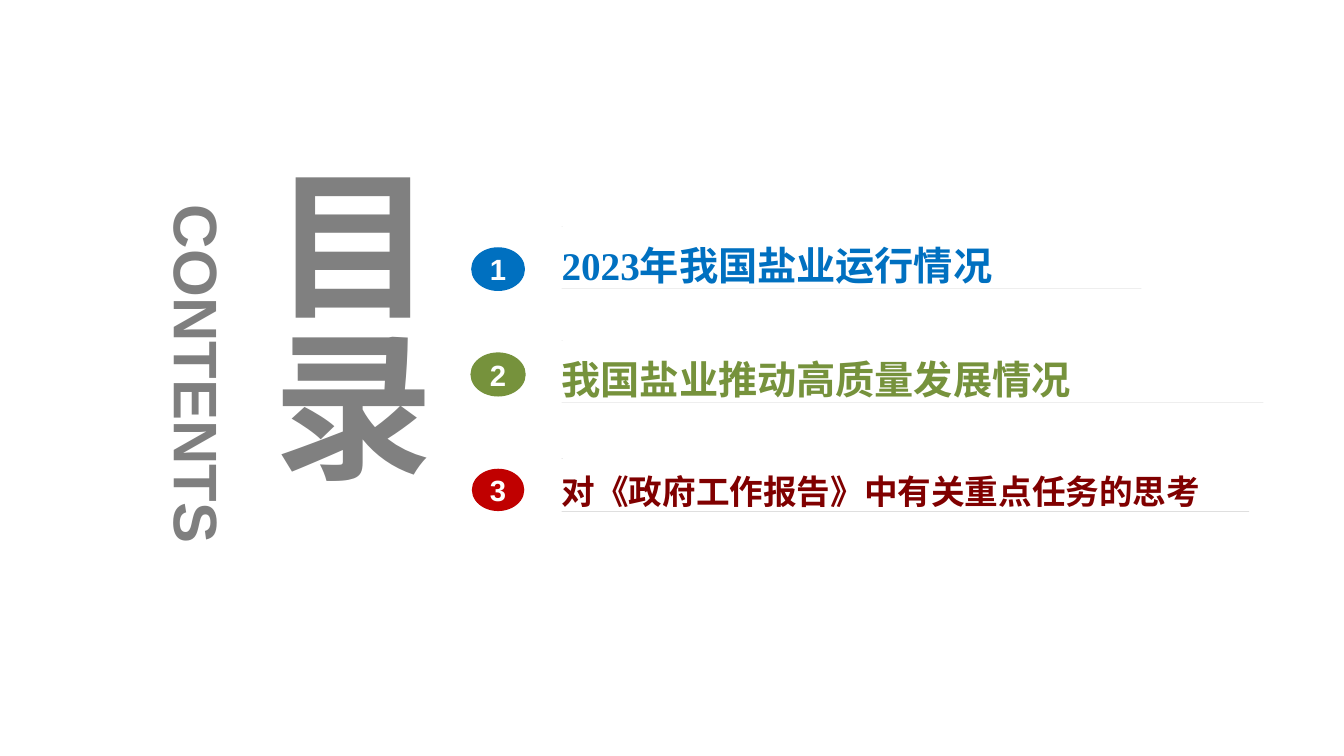
from dataclasses import dataclass

import pptx
import pptx.dml.color
import pptx.enum.shapes
import pptx.enum.text
import pptx.oxml
import pptx.oxml.ns
import pptx.util
from pptx.util import Inches

RGB = pptx.dml.color.RGBColor.from_string
ALIGN = pptx.enum.text.PP_ALIGN
ANCHOR = pptx.enum.text.MSO_ANCHOR


@dataclass(frozen=True)
class Theme:
    latin: str = "Arial"
    serif: str = "Times New Roman"
    chinese: str = "Noto Sans CJK SC"
    heading: str = "808080"
    subheading: str = "7F7F7F"
    number: str = "FFFFFF"
    rule: str = "7F7F7F"
    dark_rule: str = "000000"
    heading_size: float = 114.7
    subheading_size: float = 43.9
    number_size: float = 20.9
    entry_size: float = 28
    long_entry_size: float = 24


@dataclass(frozen=True)
class Box:
    left: float
    top: float
    width: float
    height: float

    def lengths(self) -> tuple:
        return tuple(map(Inches, (self.left, self.top, self.width, self.height)))


@dataclass(frozen=True)
class Entry:
    title: str
    box: Box
    badge_top: float
    badge_height: float
    badge_color: str
    outline: float
    color: str
    size: float
    font: str
    rule: str


THEME = Theme()
ENTRY_LEFT = 5.57
BADGE_LEFT, BADGE_WIDTH = 4.68, 0.52
TICK = 0.01

ENTRIES = [
    Entry("2023年我国盐业运行情况", Box(ENTRY_LEFT, 2.25, 5.75, 0.61), 2.46, 0.42,
          "0070C0", 1, "0070C0", THEME.entry_size, THEME.serif, THEME.rule),
    Entry("我国盐业推动高质量发展情况", Box(ENTRY_LEFT, 3.38, 6.96, 0.61), 3.51, 0.41,
          "76923C", 2, "76923C", THEME.entry_size, THEME.serif, THEME.rule),
    Entry("对《政府工作报告》中有关重点任务的思考", Box(ENTRY_LEFT, 4.55, 6.82, 0.52), 4.65, 0.42,
          "C00000", 0, "800000", THEME.long_entry_size, THEME.chinese, THEME.dark_rule),
]


def write(shape, text: str, size: float, color: str, font: str,
          align=ALIGN.CENTER, anchor=ANCHOR.MIDDLE, spacing: float = 1.0) -> None:
    frame = shape.text_frame
    frame.text = text
    frame.word_wrap = True
    frame.vertical_anchor = anchor
    frame.margin_left = frame.margin_right = 0
    frame.margin_top = frame.margin_bottom = 0
    paragraph = frame.paragraphs[0]
    paragraph.alignment = align
    paragraph.line_spacing = spacing
    run = paragraph.runs[0]
    run.font.size = pptx.util.Pt(size)
    run.font.bold = True
    run.font.name = font
    run.font.color.rgb = RGB(color)
    east_asian = pptx.oxml.parse_xml(
        f'<a:ea {pptx.oxml.ns.nsdecls("a")} typeface="{THEME.chinese}"/>')
    run.font._element.find(pptx.oxml.ns.qn("a:latin")).addnext(east_asian)


def paint(shape, color: str, outline: float = 0) -> None:
    shape.shadow.inherit = False
    shape.fill.solid()
    shape.fill.fore_color.rgb = RGB(color)
    if outline:
        shape.line.color.rgb = RGB(color)
        shape.line.width = pptx.util.Pt(outline)
    else:
        shape.line.fill.background()


def draw_headings(slide) -> None:
    heading = slide.shapes.add_textbox(*Box(2.49, 1.63, 1.93, 4.15).lengths())
    write(heading, "目录", THEME.heading_size, THEME.heading, THEME.latin, ALIGN.LEFT)
    heading.text_frame._txBody.bodyPr.set("vert", "eaVert")

    contents = slide.shapes.add_textbox(*Box(0.16, 3.34, 3.61, 0.74).lengths())
    contents.rotation = 90
    write(contents, "CONTENTS", THEME.subheading_size, THEME.subheading,
          THEME.latin, anchor=ANCHOR.TOP)


def draw_badge(slide, number: int, entry: Entry) -> None:
    box = Box(BADGE_LEFT, entry.badge_top, BADGE_WIDTH, entry.badge_height)
    badge = slide.shapes.add_shape(
        pptx.enum.shapes.MSO_SHAPE.OVAL, *box.lengths())
    paint(badge, entry.badge_color, entry.outline)
    write(badge, str(number), THEME.number_size, THEME.number, THEME.latin)


def draw_entry(slide, entry: Entry) -> None:
    left, top, width, height = entry.box.lengths()
    bottom = top + height
    outline = slide.shapes.build_freeform(left, bottom)
    outline.add_line_segments([(left + width, bottom), (left, bottom)])
    outline.move_to(left, top)
    outline.add_line_segments([(left + Inches(TICK), top), (left, top)])
    title = outline.convert_to_shape()
    paint(title, entry.rule)
    write(title, entry.title, entry.size, entry.color, entry.font,
          ALIGN.LEFT, spacing=1.3)


def main() -> None:
    deck = pptx.Presentation()
    deck.slide_width, deck.slide_height = Inches(13.33), Inches(7.5)
    slide = deck.slides.add_slide(deck.slide_layouts[6])
    draw_headings(slide)
    for number, entry in enumerate(ENTRIES, start=1):
        draw_badge(slide, number, entry)
        draw_entry(slide, entry)
    deck.save("out.pptx")


if __name__ == "__main__":
    main()
